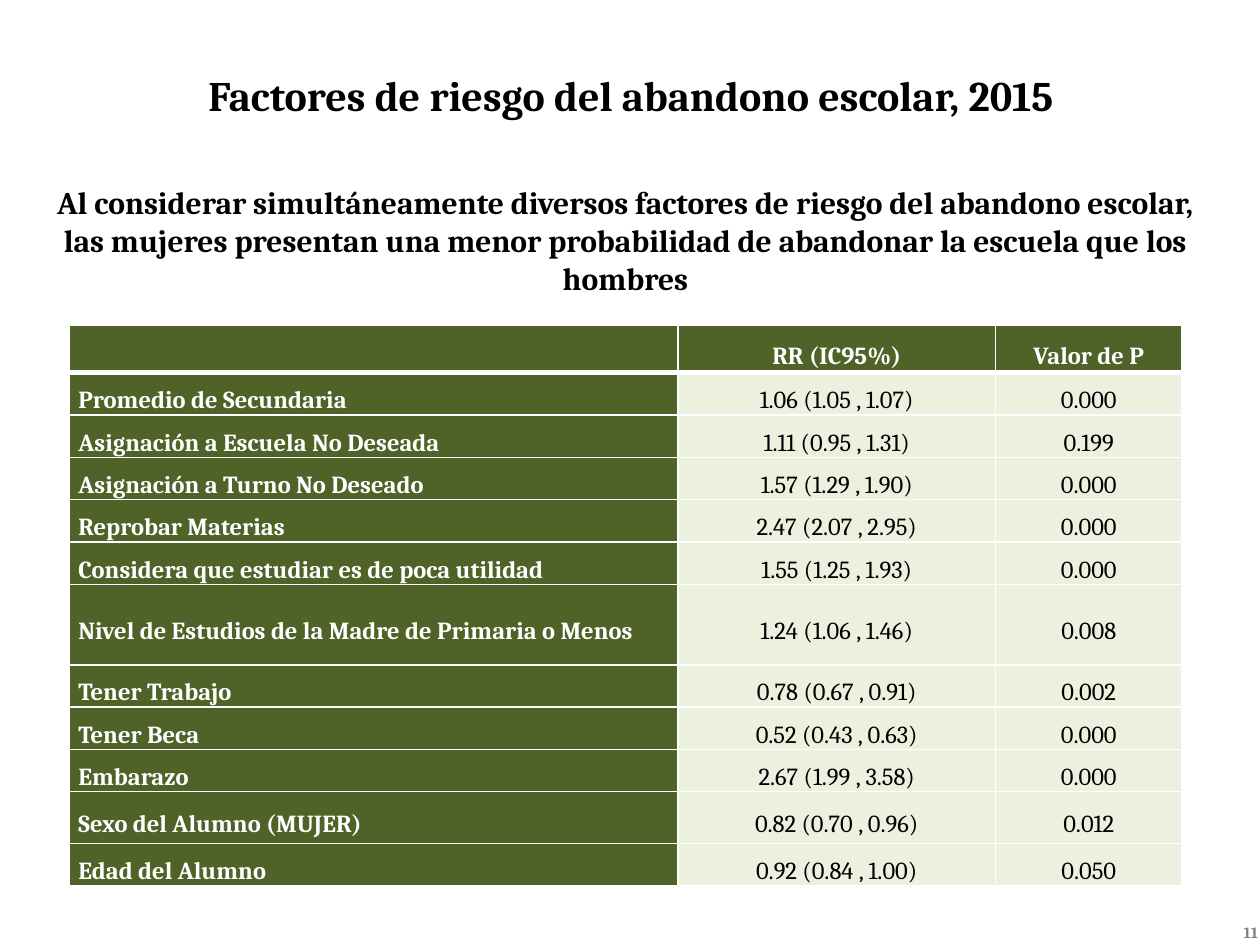
import pptx
import pptx.util
import pptx.dml.color
import pptx.enum.text
import pptx.oxml
import pptx.oxml.ns
from dataclasses import dataclass

Pt = pptx.util.Pt
Align = pptx.enum.text.PP_ALIGN
Anchor = pptx.enum.text.MSO_ANCHOR


@dataclass(frozen=True)
class Theme:
    font: str = "Cambria"
    dark: str = "4F6228"
    pale: str = "EBF1DE"
    white: str = "FFFFFF"
    black: str = "000000"
    gray: str = "808080"
    title: int = 24
    lead: int = 18
    body: int = 14
    note: int = 9


def color(code):
    return pptx.dml.color.RGBColor.from_string(code)


def write(frame, text, font, size, ink, bold=True, align=Align.CENTER,
          line=None, before=None):
    para = frame.paragraphs[0]
    para.alignment = align
    para.line_spacing = line
    para.space_before = before
    if text:
        run = para.add_run()
        run.text = text
        run.font.name = font
        run.font.size = Pt(size)
        run.font.bold = bold
        run.font.color.rgb = color(ink)


class Page:
    def __init__(self, slide, theme):
        self.slide = slide
        self.theme = theme

    def text(self, text, box, size, ink, align=Align.CENTER, anchor=Anchor.TOP):
        shape = self.slide.shapes.add_textbox(*map(Pt, box))
        frame = shape.text_frame
        frame.word_wrap = True
        frame.vertical_anchor = anchor
        write(frame, text, self.theme.font, size, ink, align=align)

    def border(self, cell, side, width):
        props = cell._tc.get_or_add_tcPr()
        props.append(pptx.oxml.parse_xml(
            f'<a:ln{side} {pptx.oxml.ns.nsdecls("a")} w="{Pt(width)}">'
            f'<a:solidFill><a:srgbClr val="{self.theme.white}"/></a:solidFill>'
            f'</a:ln{side}>'))

    def cell(self, cell, text, row, col):
        look = self.theme
        head = row == 0 or col == 0
        # Thick rule between the header and the body
        tops = 3 if row == 1 else 1
        ends = 3 if row == 0 else 1
        for side, width in zip("LRTB", (1, 1, tops, ends)):
            self.border(cell, side, width)
        cell.fill.solid()
        cell.fill.fore_color.rgb = color(look.dark if head else look.pale)
        cell.vertical_anchor = Anchor.MIDDLE
        cell.margin_left = cell.margin_right = Pt(5)
        cell.margin_top = cell.margin_bottom = 0
        write(cell.text_frame, text, look.font, look.body,
              look.white if head else look.black, bold=head,
              align=Align.CENTER if col else Align.LEFT,
              line=1.5, before=Pt(6))

    def table(self, data, left, top, cols, rows):
        grid = self.slide.shapes.add_table(
            len(rows), len(cols), Pt(left), Pt(top),
            Pt(sum(cols)), Pt(sum(rows))).table
        grid.horz_banding = False
        for part, width in zip(grid.columns, cols):
            part.width = Pt(width)
        for part, height in zip(grid.rows, rows):
            part.height = Pt(height)
        for r, line in enumerate(data):
            for c, text in enumerate(line):
                self.cell(grid.cell(r, c), text, r, c)


DATA = [
    ("", "RR (IC95%)", "Valor de P"),
    ("Promedio de Secundaria", "1.06 (1.05 , 1.07)", "0.000"),
    ("Asignación a Escuela No Deseada", "1.11 (0.95 , 1.31)", "0.199"),
    ("Asignación a Turno No Deseado", "1.57 (1.29 , 1.90)", "0.000"),
    ("Reprobar Materias", "2.47 (2.07 , 2.95)", "0.000"),
    ("Considera que estudiar es de poca utilidad", "1.55 (1.25 , 1.93)", "0.000"),
    ("Nivel de Estudios de la Madre de Primaria o Menos",
     "1.24 (1.06 , 1.46)", "0.008"),
    ("Tener Trabajo", "0.78 (0.67 , 0.91)", "0.002"),
    ("Tener Beca", "0.52 (0.43 , 0.63)", "0.000"),
    ("Embarazo", "2.67 (1.99 , 3.58)", "0.000"),
    ("Sexo del Alumno (MUJER)", "0.82 (0.70 , 0.96)", "0.012"),
    ("Edad del Alumno", "0.92 (0.84 , 1.00)", "0.050"),
]


def main():
    deck = pptx.Presentation()
    deck.slide_width, deck.slide_height = Pt(720), Pt(540)
    look = Theme()
    page = Page(deck.slides.add_slide(deck.slide_layouts[6]), look)

    # Risk factors, with taller rows where needed
    tall = {0: 27, 6: 46, 10: 29.5}
    rows = [tall.get(i, 23) for i in range(len(DATA))]
    page.table(DATA, 39.8, 186, (347.6, 181.6, 106.4), rows)

    # Title and main message
    page.text("Factores de riesgo del abandono escolar, 2015",
              (16, 36, 689, 36), look.title, look.black)
    page.text("Al considerar simultáneamente diversos factores de riesgo del "
              "abandono escolar, las mujeres presentan una menor probabilidad "
              "de abandonar la escuela que los hombres",
              (14.4, 101, 686, 73), look.lead, look.black)

    # Page number
    page.text("11", (558, 525, 168, 16), look.note, look.gray,
              align=Align.RIGHT, anchor=Anchor.MIDDLE)

    deck.save("out.pptx")


if __name__ == "__main__":
    main()
